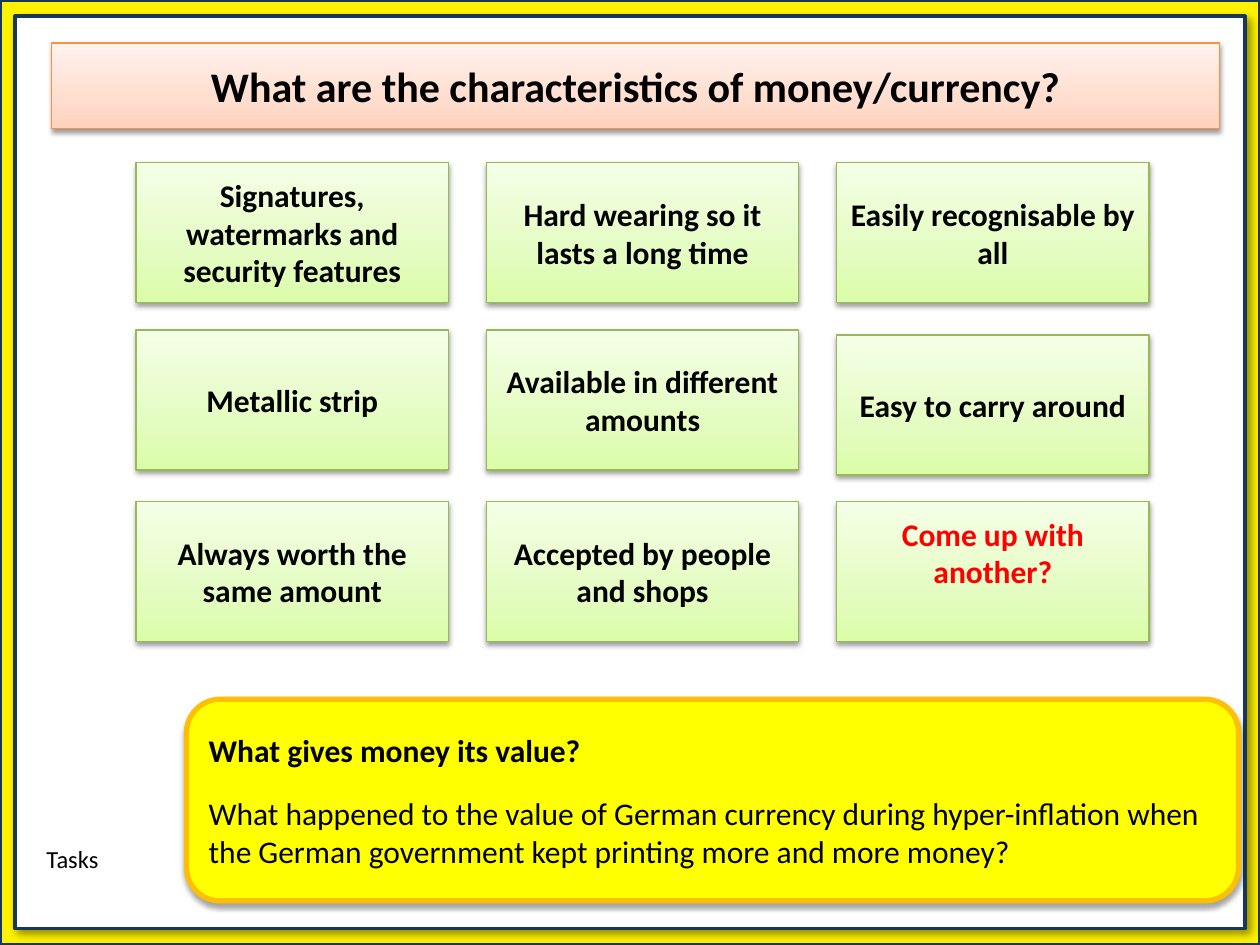
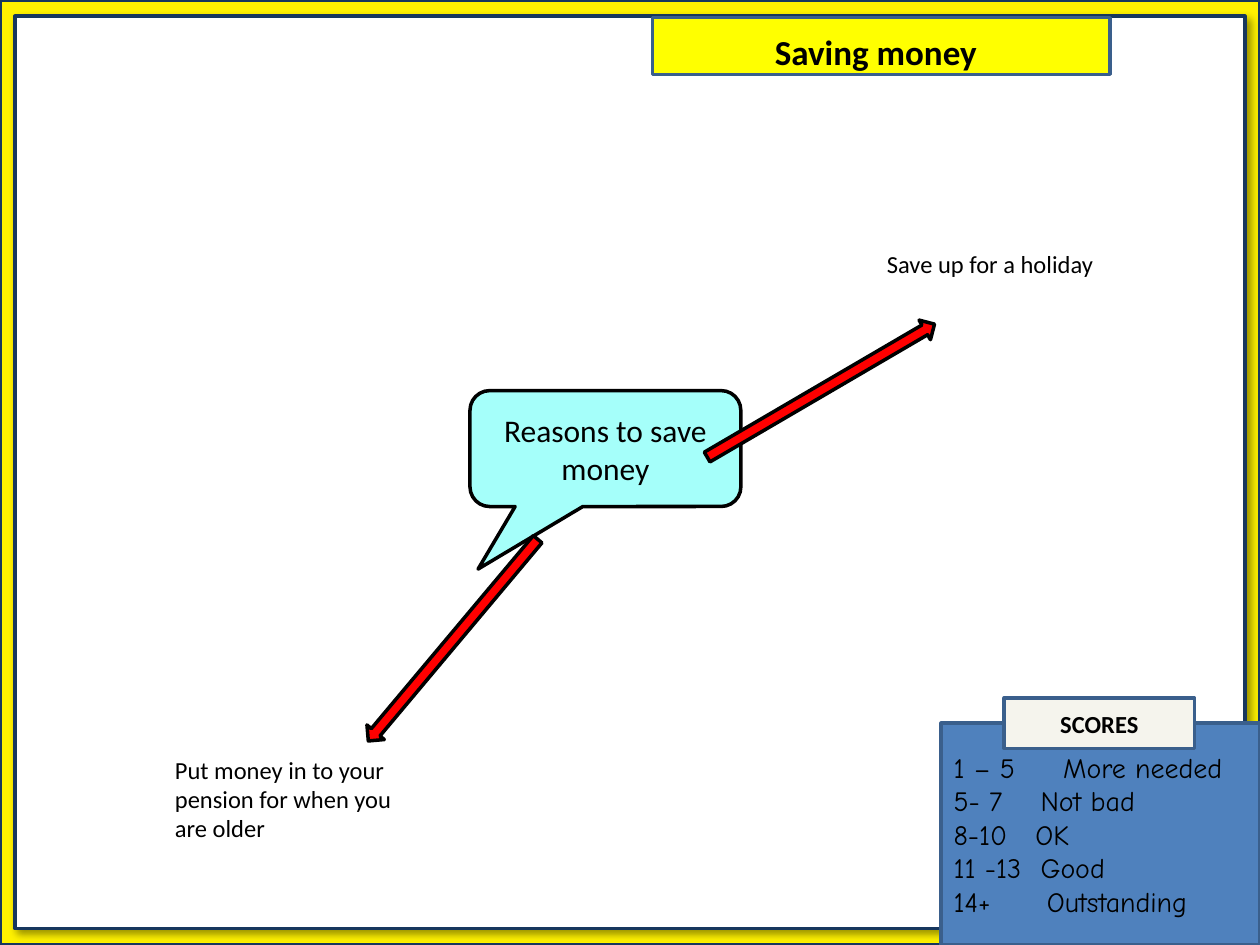
from copy import deepcopy

from lxml import etree
from pptx import Presentation
from pptx.dml.color import RGBColor
from pptx.enum.shapes import MSO_SHAPE
from pptx.enum.text import MSO_ANCHOR, MSO_AUTO_SIZE, PP_ALIGN
from pptx.oxml.ns import qn
from pptx.util import Emu, Inches, Pt

RECT = MSO_SHAPE.RECTANGLE
ROUNDED = MSO_SHAPE.ROUNDED_RECTANGLE
CALLOUT = MSO_SHAPE.ROUNDED_RECTANGULAR_CALLOUT
ARROW = MSO_SHAPE.RIGHT_ARROW
LEFT, CENTER = PP_ALIGN.LEFT, PP_ALIGN.CENTER
TOP, MIDDLE = MSO_ANCHOR.TOP, MSO_ANCHOR.MIDDLE
NO_AUTOFIT = MSO_AUTO_SIZE.NONE
TITLE_ONLY = 5

COLOURS = {
    "black": "000000", "white": "FFFFFF", "red": "FF0000",
    "border": "FFF200", "navy": "17375E", "yellow": "FFFF00",
    "amber": "FDC000", "orange": "F69240", "green": "98B955",
    "blue": "4F81BD", "blue_edge": "3A5F8C", "cyan": "A5FFFA",
    "cream": "F5F4ED",
}
PEACH_FADE = ("FFD2BD", "FFDED0", "FFF2ED")
GREEN_FADE = ("DAFDA7", "E4FCC2", "F5FFE7")
FADE_POSITIONS = (0, 0.35, 1)

# Shadows: opacity %, blur pt, distance pt, direction in degrees
FRAME_SHADOW = (40, 4, 3, 45)
CARD_SHADOW = (38, 3.1, 1.6, 90)
TASK_SHADOW = (35, 3.1, 1.8, 90)

BODY_FONT, SCORE_FONT = "Calibri", "Comic Neue"

CARD_SIZE = (2.48, 1.11)
CARD_STEP = 2.78
CARD_ROWS = (0, 1.33, 2.69)
CARDS = (
    ("Signatures, watermarks and security features",
     "Hard wearing so it lasts a long time",
     "Easily recognisable by all"),
    ("Metallic strip",
     "Available in different amounts",
     "Easy to carry around"),
    ("Always worth the same amount",
     "Accepted by people and shops",
     "Come up with another?"),
)
LOWERED_CARD = "Easy to carry around"
PROMPT_CARD = "Come up with another?"

# Score range, verdict and where the verdict starts
SCORES = (
    ("1 – 5", "More needed", 0.87),
    ("5- 7", "Not bad", 0.69),
    ("8-10", "OK", 0.65),
    ("11 -13", "Good", 0.69),
    ("14+", "Outstanding", 0.74),
)


def colour(name):
    return RGBColor.from_string(COLOURS.get(name, name))


def place(shape, box):
    shape.left, shape.top, shape.width, shape.height = map(Inches, box)


def add_shadow(shape, shadow):
    opacity, blur, distance, direction = shadow
    effects = shape.element.spPr.find(qn("a:effectLst"))
    outer = etree.SubElement(
        effects, qn("a:outerShdw"), blurRad=str(Pt(blur)), dist=str(Pt(distance)),
        dir=str(direction * 60000), algn="ctr", rotWithShape="0")
    tint = etree.SubElement(outer, qn("a:srgbClr"), val=COLOURS["black"])
    etree.SubElement(tint, qn("a:alpha"), val=str(opacity * 1000))


def fade(shape, shades):
    """Fill with three shades that run from the bottom to the top."""
    shape.fill.gradient()
    shape.fill.gradient_angle = 90
    stop_list = next(shape.element.spPr.iter(qn("a:gsLst")))
    stop_list.insert(1, deepcopy(stop_list[0]))
    for stop, shade, position in zip(shape.fill.gradient_stops, shades, FADE_POSITIONS):
        stop.color.rgb = colour(shade)
        stop.position = position


def decorate(shape, fill, line, line_width, shadow=None):
    """Apply a plain fill, or a fade when fill is a tuple, with outline and shadow."""
    if isinstance(fill, tuple):
        fade(shape, fill)
    else:
        shape.fill.solid()
        shape.fill.fore_color.rgb = colour(fill)
    shape.line.color.rgb = colour(line)
    shape.line.width = Pt(line_width)
    shape.shadow.inherit = False
    if shadow:
        add_shadow(shape, shadow)


def add_block(page, kind, box, fill, line, line_width, shadow=None):
    shape = page.shapes.add_shape(kind, *map(Inches, box))
    decorate(shape, fill, line, line_width, shadow)
    return shape


def format_para(para, size, bold=False, ink="black", font=BODY_FONT, align=CENTER):
    para.alignment = align
    for span in para.runs:
        span.font.name = font
        span.font.size = Pt(size)
        span.font.bold = bold
        span.font.color.rgb = colour(ink)


def write(shape, text, size, anchor=MIDDLE, **style):
    frame = shape.text_frame
    frame.text = text
    frame.word_wrap = True
    frame.auto_size = NO_AUTOFIT
    frame.vertical_anchor = anchor
    for para in frame.paragraphs:
        format_para(para, size, **style)
    return frame


def add_note(page, box, text, align=LEFT):
    note = page.shapes.add_textbox(*map(Inches, box))
    write(note, text, 14, anchor=TOP, align=align)


def add_title(page, box, text, size, fill, line, line_width, shadow=None):
    title = page.shapes.title
    place(title, box)
    decorate(title, fill, line, line_width, shadow)
    return write(title, text, size, bold=True)


def add_frame(layout, page):
    """Draw the yellow border and white sheet, then hand them to the layout."""
    border = add_block(page, RECT, (0, 0, 10, 7.5), "border", "navy", 2.25)
    sheet = add_block(page, RECT, (0.12, 0.13, 9.76, 7.24), "white", "navy", 2.25,
                      FRAME_SHADOW)
    for index, shape in enumerate((border, sheet), start=2):
        layout.shapes.element.insert(index, shape.element)


def add_card_grid(page, box):
    left, top = box[:2]
    for row_offset, row in zip(CARD_ROWS, CARDS):
        for column, text in enumerate(row):
            lowering = 0.04 if text == LOWERED_CARD else 0
            card_box = (left + column * CARD_STEP, top + row_offset + lowering, *CARD_SIZE)
            card = add_block(page, RECT, card_box, GREEN_FADE, "green", 0.75, CARD_SHADOW)
            is_prompt = text == PROMPT_CARD
            frame = write(card, text, 18, bold=True, ink="red" if is_prompt else "black")
            if is_prompt:
                frame.margin_bottom = Inches(0.35)


def add_task_box(page, box):
    panel = add_block(page, ROUNDED, box, "yellow", "amber", 3, TASK_SHADOW)
    frame = write(panel, "What gives money its value?", 18, bold=True, align=LEFT)
    question = frame.add_paragraph()
    question.text = ("What happened to the value of German currency during hyper-inflation "
                     "when the German government kept printing more and more money?")
    question.space_before = Pt(14.6)
    format_para(question, 18, align=LEFT)


def add_reasons(page, box):
    """Draw the central callout with its two arrows and example reasons."""
    left, top, width, height = box
    callout = add_block(page, CALLOUT, box, "cyan", "black", 2)
    for index, value in enumerate((-0.47, 1.04, 0.17)):
        callout.adjustments[index] = value
    write(callout, "Reasons to save money", 18)

    for across, down, angle in ((1.74, -0.09, 329.7), (-1.18, 1.89, 130)):
        arrow = add_block(page, ARROW, (left + across, top + down, 2.09, 0.18),
                          "red", "black", 2)
        arrow.rotation = angle

    add_note(page, (left + 3.21, top - 1.17, 2.04, 0.57), "Save up for a holiday")
    add_note(page, (left - 2.44, top + 2.84, 2.04, 0.81),
             "Put money in to your pension for when you are older")


def add_scores(page, box):
    left, top = box[:2]
    panel = add_block(page, RECT, box, "blue", "blue_edge", 2)
    lines = "\n".join(f"{points}\t{verdict}" for points, verdict, _ in SCORES)
    frame = write(panel, lines, 16, font=SCORE_FONT, align=LEFT)
    for para, (_, _, start) in zip(frame.paragraphs, SCORES):
        tabs = etree.SubElement(para._p.get_or_add_pPr(), qn("a:tabLst"))
        etree.SubElement(tabs, qn("a:tab"), pos=str(Emu(Inches(start))), algn="l")

    label = add_block(page, RECT, (left + 0.5, top - 0.2, 1.51, 0.4),
                      "cream", "blue_edge", 2)
    write(label, "SCORES", 14, bold=True)


def build_characteristics(page):
    add_title(page, (0.41, 0.34, 9.27, 0.68),
              "What are the characteristics of money/currency?", 24,
              PEACH_FADE, "orange", 0.75, CARD_SHADOW)
    add_card_grid(page, (1.08, 1.29, 8.04, 3.8))
    add_note(page, (0.25, 6.65, 0.65, 0.34), "Tasks", align=CENTER)
    add_task_box(page, (1.48, 5.55, 8.35, 1.6))


def build_saving(page):
    frame = add_title(page, (5.18, 0.14, 3.63, 0.45), "Saving money", 20,
                      "yellow", "blue_edge", 2)
    trailing_space = frame.paragraphs[0].add_run()
    trailing_space.text = " "
    trailing_space.font.name = BODY_FONT
    trailing_space.font.size = Pt(28)
    add_reasons(page, (3.73, 3.1, 2.15, 0.92))
    add_scores(page, (7.47, 5.74, 2.53, 1.76))


def main():
    deck = Presentation()
    deck.slide_width, deck.slide_height = Inches(10), Inches(7.5)
    layout = deck.slide_layouts[TITLE_ONLY]
    characteristics = deck.slides.add_slide(layout)
    add_frame(layout, characteristics)
    build_characteristics(characteristics)
    build_saving(deck.slides.add_slide(layout))
    deck.save("out.pptx")


if __name__ == "__main__":
    main()
